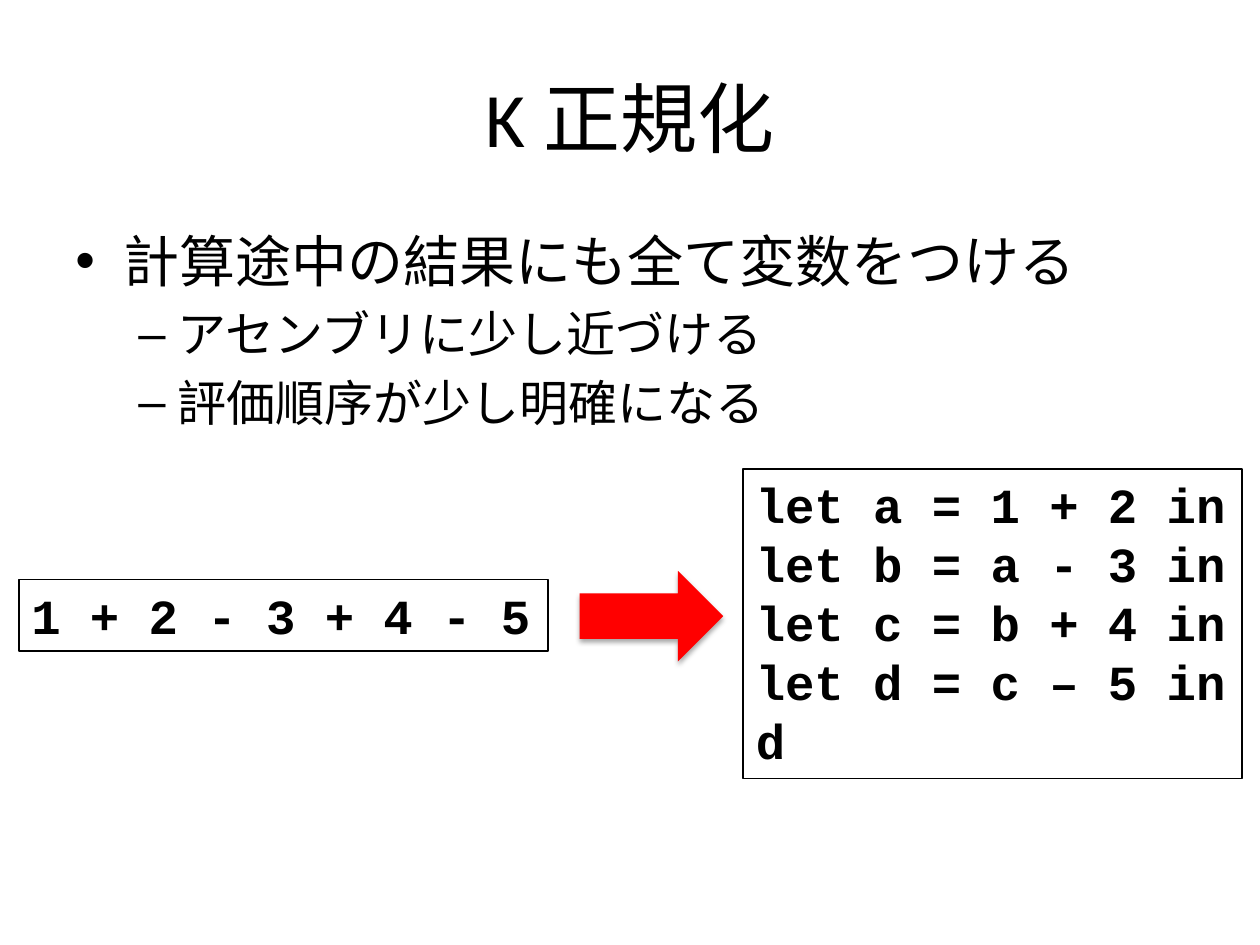
from lxml.etree import fromstring
from pptx import Presentation
from pptx.dml.color import RGBColor as Rgb
from pptx.enum.shapes import MSO_SHAPE as Kind
from pptx.enum.text import MSO_ANCHOR as Anchor, MSO_AUTO_SIZE as Auto, PP_ALIGN as Align
from pptx.oxml.ns import nsdecls
from pptx.util import Inches, Pt

HUES = {"ink": "000000", "arrow": "FF0000"}
BODY, MONO = "Calibri", "Courier New"
TITLE = "K 正規化"
POINTS = [
    (0, "計算途中の結果にも全て変数をつける"),
    (1, "アセンブリに少し近づける"),
    (1, "評価順序が少し明確になる"),
]
LEVELS = [("•", 32, 0.38, -0.38), ("–", 28, 0.81, -0.31)]
CODES = [
    ((0.15, 4.6, 4.2, 0.57), ["1 + 2 - 3 + 4 - 5"]),
    ((5.9, 3.72, 3.96, 2.46), [
        "let a = 1 + 2 in",
        "let b = a - 3 in",
        "let c = b + 4 in",
        "let d = c – 5 in",
        "d",
    ]),
]
ARROW = (4.6, 4.53, 1.14, 0.72)


def hue(name):
    return Rgb.from_string(HUES[name])


def add_box(slide, area, lines, font, size, bold=False):
    box = slide.shapes.add_textbox(*map(Inches, area))
    frame = box.text_frame
    frame.word_wrap = True
    frame.text = "\n".join(lines)
    for para in frame.paragraphs:
        for run in para.runs:
            run.font.name, run.font.size, run.font.bold = font, Pt(size), bold
            run.font.color.rgb = hue("ink")
    return box


def add_bullet(para, level):
    mark, size, left, hang = LEVELS[level]
    para.level = level
    para.space_before = Pt(size * 0.2)
    para.runs[0].font.size = Pt(size)
    props = para._p.get_or_add_pPr()
    props.set("marL", str(Inches(left)))
    props.set("indent", str(Inches(hang)))
    props.append(fromstring(f'<a:buFont {nsdecls("a")} typeface="Arial"/>'))
    props.append(fromstring(f'<a:buChar {nsdecls("a")} char="{mark}"/>'))


def add_arrow(slide):
    arrow = slide.shapes.add_shape(Kind.RIGHT_ARROW, *map(Inches, ARROW))
    arrow.fill.solid()
    arrow.fill.fore_color.rgb = hue("arrow")
    arrow.line.fill.background()
    arrow._element.spPr.append(fromstring(
        f'<a:effectLst {nsdecls("a")}>'
        f'<a:outerShdw blurRad="{Pt(3.1)}" dist="{Pt(1.8)}" dir="5400000" rotWithShape="0">'
        f'<a:srgbClr val="{HUES["ink"]}"><a:alpha val="35000"/></a:srgbClr>'
        '</a:outerShdw></a:effectLst>'))


def main():
    deck = Presentation()
    deck.slide_width, deck.slide_height = Inches(10), Inches(7.5)
    slide = deck.slides.add_slide(deck.slide_layouts[6])

    title = add_box(slide, (0.5, 0.3, 9, 1.25), [TITLE], BODY, 44).text_frame
    title.vertical_anchor = Anchor.MIDDLE
    title.paragraphs[0].alignment = Align.CENTER

    texts = [text for _, text in POINTS]
    body = add_box(slide, (0.5, 1.75, 9, 4.95), texts, BODY, 32).text_frame
    for para, (level, _) in zip(body.paragraphs, POINTS):
        add_bullet(para, level)

    for area, lines in CODES:
        code = add_box(slide, area, lines, MONO, 28, True)
        code.text_frame.word_wrap = False
        code.text_frame.auto_size = Auto.SHAPE_TO_FIT_TEXT
        code.line.color.rgb = hue("ink")
        code.line.width = Pt(1)

    add_arrow(slide)
    deck.save("out.pptx")


if __name__ == "__main__":
    main()
